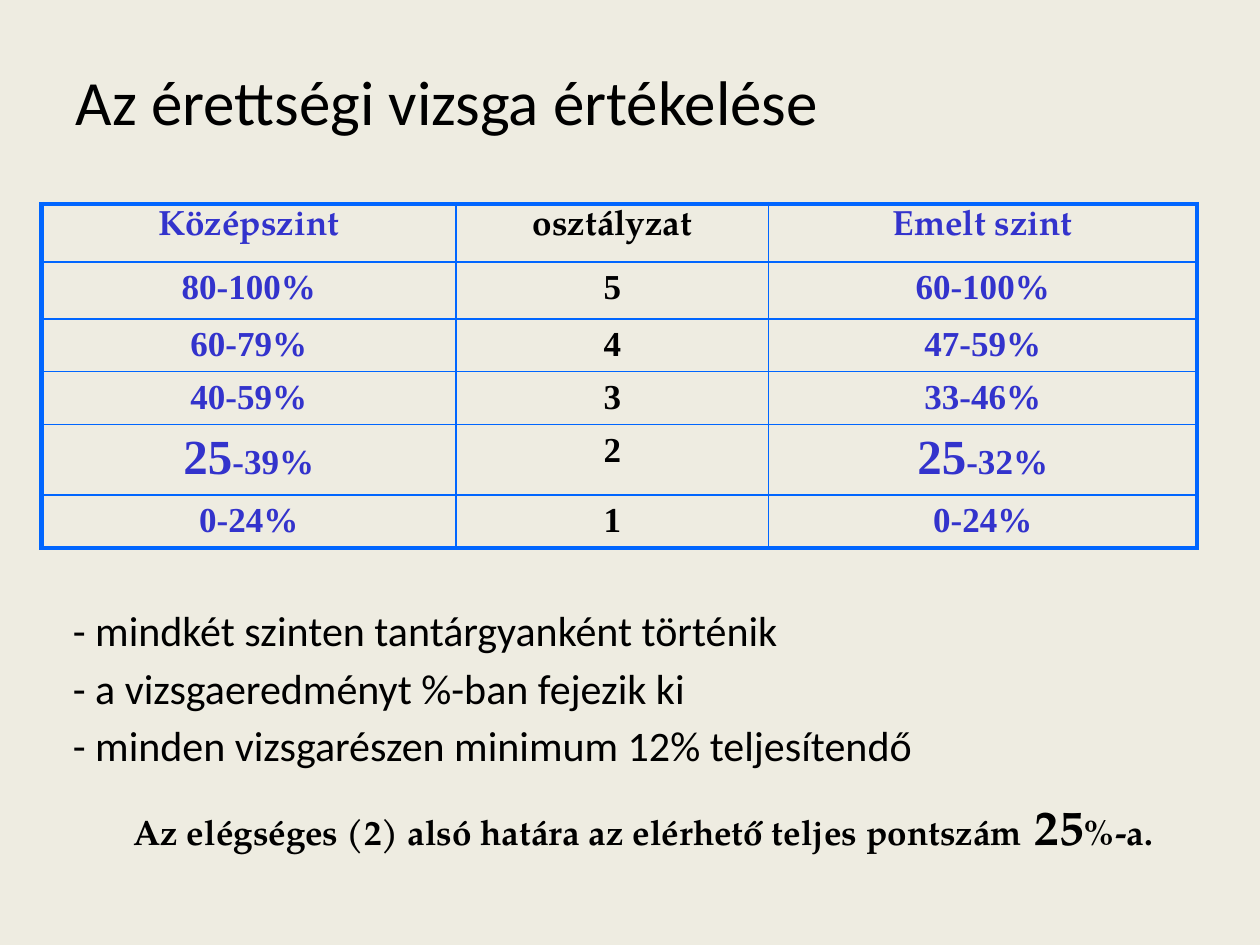
from lxml import etree
from pptx import Presentation
from pptx.dml.color import RGBColor
from pptx.enum import text as t
from pptx.oxml import ns
from pptx.util import Inches, Pt

COLORS = {"background": "EEECE1", "ink": "000000", "blue": "3333CC", "border": "0066FF"}
BODY, SERIF, DIGITS = "Calibri", "TeX Gyre Pagella", "Times New Roman"
COLUMNS = [3.29, 2.48, 3.4]
ROWS = [0.46, 0.45, 0.42, 0.42, 0.56, 0.42]
GRADES = [
    ["Középszint", "osztályzat", "Emelt szint"],
    ["80-100%", "5", "60-100%"],
    ["60-79%", "4", "47-59%"],
    ["40-59%", "3", "33-46%"],
    [[("25", 28), ("-39%", 20)], "2", [("25", 28), ("-32%", 20)]],
    ["0-24%", "1", "0-24%"],
]
NOTES = [
    "- mindkét szinten tantárgyanként történik",
    "- a vizsgaeredményt %-ban fejezik ki",
    "- minden vizsgarészen minimum 12% teljesítendő",
]


def write(paragraph, content, size=20, font=BODY, color="ink", bold=False,
          align=t.PP_ALIGN.LEFT, before=0):
    """Content is a string or a list of (string, size) parts."""
    paragraph.alignment = align
    paragraph.space_before = Pt(before)
    parts = [(content, size)] if isinstance(content, str) else content
    for words, points in parts:
        run = paragraph.add_run()
        run.text = words
        run.font.size = Pt(points)
        run.font.name = font
        run.font.bold = bold
        run.font.color.rgb = RGBColor.from_string(COLORS[color])


def set_borders(cell, widths):
    properties = cell._tc.get_or_add_tcPr()
    for position, (side, width) in enumerate(widths.items()):
        line = etree.Element(ns.qn(f"a:ln{side}"), w=str(Pt(width)))
        fill = etree.SubElement(line, ns.qn("a:solidFill"))
        etree.SubElement(fill, ns.qn("a:srgbClr"), val=COLORS["border"])
        properties.insert(position, line)


def add_title(slide, box, words):
    title = slide.shapes.title
    title.left, title.top, title.width, title.height = map(Inches, box)
    title.text_frame.vertical_anchor = t.MSO_ANCHOR.MIDDLE
    write(title.text_frame.paragraphs[0], words, size=36)


def add_grades(slide, box):
    table = slide.shapes.add_table(len(ROWS), len(COLUMNS), *map(Inches, box)).table
    table.first_row = table.horz_banding = False
    for column, width in zip(table.columns, COLUMNS):
        column.width = Inches(width)
    last_row, last_column = len(ROWS) - 1, len(COLUMNS) - 1
    for i, (row, height) in enumerate(zip(table.rows, ROWS)):
        row.height = Inches(height)
        for j, cell in enumerate(row.cells):
            cell.margin_left = cell.margin_right = Inches(0.14)
            cell.margin_top = cell.margin_bottom = Inches(0.05)
            cell.fill.background()
            # Thick outer frame, thin inner lines
            set_borders(cell, {"L": 3 if j == 0 else 1, "R": 3 if j == last_column else 1,
                               "T": 3 if i == 0 else 1, "B": 3 if i == last_row else 1})
            write(cell.text_frame.paragraphs[0], GRADES[i][j],
                  font=SERIF if i == 0 else DIGITS, color="ink" if j == 1 else "blue",
                  bold=True, align=t.PP_ALIGN.CENTER)


def add_text(slide, box, lines, top_inset=0.05, **style):
    frame = slide.shapes.add_textbox(*map(Inches, box)).text_frame
    frame.word_wrap = True
    frame.margin_top = Inches(top_inset)
    for i, line in enumerate(lines):
        paragraph = frame.paragraphs[0] if i == 0 else frame.add_paragraph()
        write(paragraph, line, before=4, **style)


def main():
    presentation = Presentation()
    presentation.slide_width, presentation.slide_height = Inches(10), Inches(7.5)
    slide = presentation.slides.add_slide(presentation.slide_layouts[5])
    slide.background.fill.solid()
    slide.background.fill.fore_color.rgb = RGBColor.from_string(COLORS["background"])

    add_title(slide, (0.5, 0.36, 9, 0.87), "Az érettségi vizsga értékelése")
    add_grades(slide, (0.33, 1.62, sum(COLUMNS), sum(ROWS)))
    # Rules of the evaluation
    add_text(slide, (0.48, 4.36, 7.45, 1.27), NOTES, top_inset=0.44, size=24)
    # Pass mark
    pass_mark = [("Az elégséges (2) alsó határa az elérhető teljes pontszám", 20),
                 (" 25", 28), ("%-a.", 20)]
    add_text(slide, (0.49, 6.27, 9.23, 0.55), [pass_mark], font=SERIF, bold=True,
             align=t.PP_ALIGN.CENTER)
    presentation.save("out.pptx")


if __name__ == "__main__":
    main()
